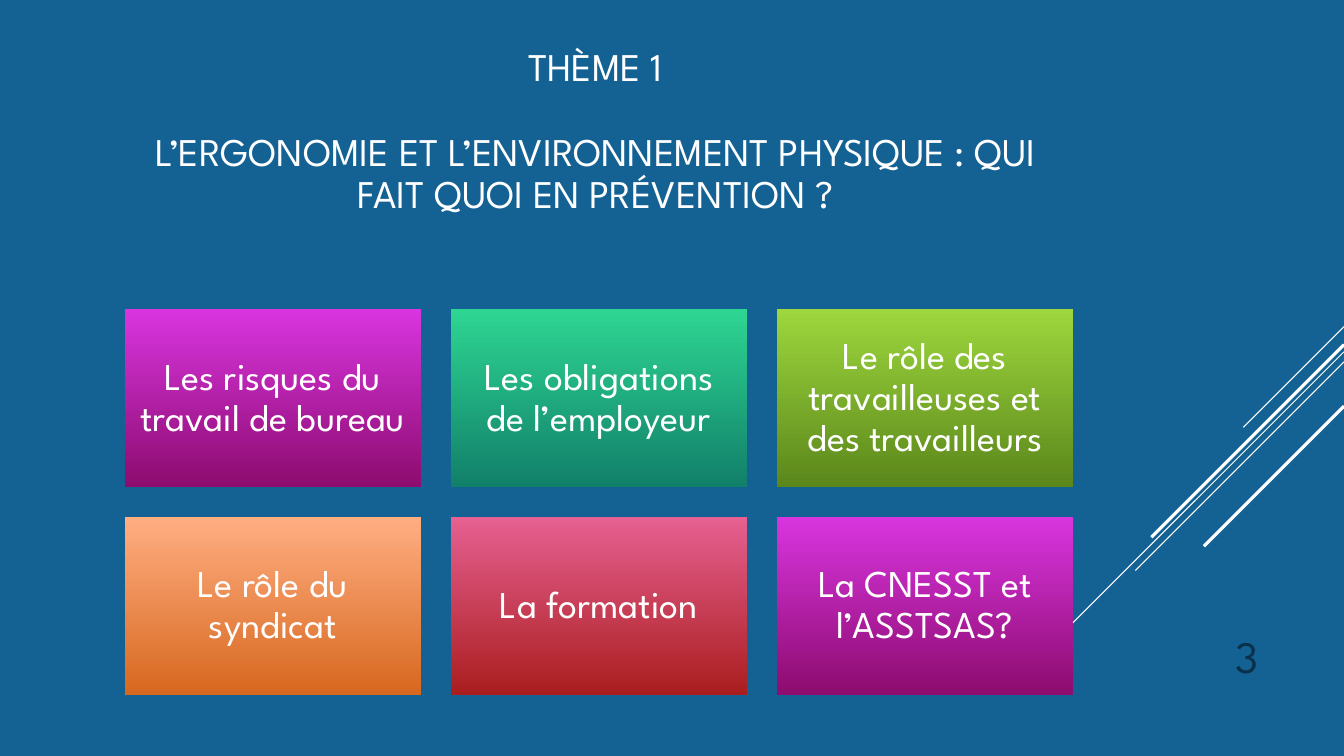
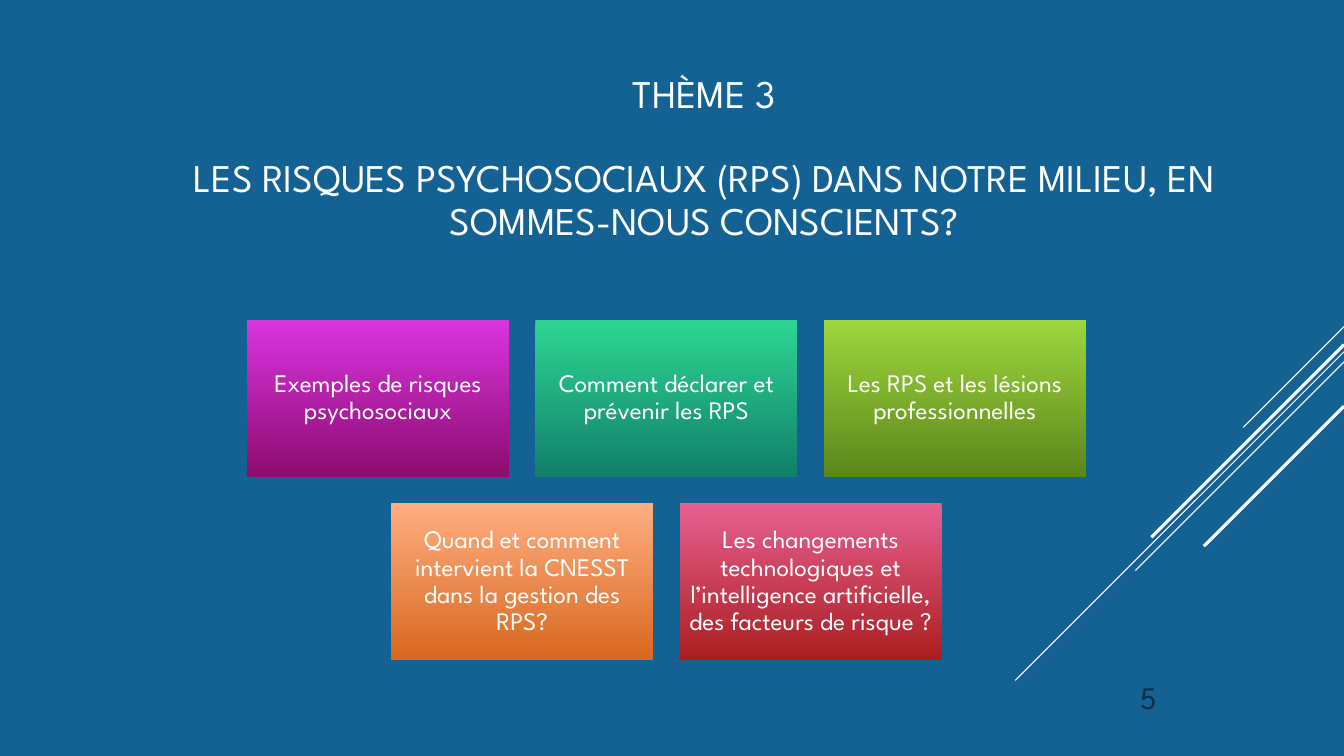
from pptx import Presentation
from pptx.dml.color import RGBColor
from pptx.enum.shapes import MSO_CONNECTOR, MSO_SHAPE
from pptx.enum.text import MSO_ANCHOR as ANCHOR, MSO_AUTO_SIZE as AUTO, PP_ALIGN as ALIGN
from pptx.oxml.ns import qn
from pptx.util import Inches, Pt
from lxml.etree import SubElement

FONT = "League Spartan"
BACKGROUND, WHITE, NUMBER_COLOR = "146194", "FFFFFF", "0A304A"
GRADIENTS = [
    ("D835DF", "8D0C6F"),
    ("2ED592", "11806A"),
    ("9DD63D", "5B871B"),
    ("FFAE82", "D7681F"),
    ("E66091", "AA1E1F"),
]
RIGHT_EDGE = 13.33
DIAGONALS = [
    (3.24, 1.0, 0.75),
    (3.49, 3.26, 0.75),
    (3.59, 2.07, 0.75),
    (3.42, 1.91, 2.25),
    (4.03, 1.39, 2.25),
]
TILES_PER_ROW = 3

THEMES = [
    dict(
        title=["THÈME 1", "L’ERGONOMIE ET L’ENVIRONNEMENT PHYSIQUE : QUI FAIT QUOI EN PRÉVENTION ?"],
        title_box=(1.24, 0.49, 9.33, 1.65),
        tiles=[
            "Les risques du travail de bureau",
            "Les obligations de l’employeur",
            "Le rôle des travailleuses et des travailleurs",
            "Le rôle du syndicat",
            "La formation",
            "La CNESST et l’ASSTSAS?",
        ],
        grid=dict(center=5.94, top=3.07, width=2.94, size=27, inset=0.11),
        number=("3", (11.33, 6.1, 1.25, 0.73), 32),
    ),
    dict(
        title=["THÈME 3", "LES RISQUES PSYCHOSOCIAUX (RPS) DANS NOTRE MILIEU, EN SOMMES-NOUS CONSCIENTS?"],
        title_box=(1.41, 0.67, 11.15, 1.82),
        tiles=[
            "Exemples de risques psychosociaux",
            "Comment déclarer et prévenir les RPS",
            "Les RPS et les lésions professionnelles",
            "Quand et comment intervient la CNESST dans la gestion des RPS?",
            "Les changements technologiques et l’intelligence artificielle, des facteurs de risque ?",
        ],
        grid=dict(center=6.61, top=3.17, width=2.6, size=18, inset=0.07),
        number=("5", (10.82, 6.76, 0.75, 0.4), 22.4),
    ),
]


def rgb(value):
    return RGBColor.from_string(value)


def add_text(p, text, size, color=WHITE, align=ALIGN.CENTER):
    p.alignment = align
    p.line_spacing = 0.9
    r = p.add_run()
    r.text = text
    r.font.name = FONT
    r.font.size = Pt(size)
    r.font.color.rgb = rgb(color)


def add_diagonals(s):
    for top, run, weight in DIAGONALS:
        ends = (RIGHT_EDGE, top, RIGHT_EDGE - run, top + run)
        line = s.shapes.add_connector(MSO_CONNECTOR.STRAIGHT, *map(Inches, ends))
        line.line.color.rgb = rgb(WHITE)
        line.line.width = Pt(weight)
        SubElement(line.element.spPr, qn("a:effectLst"))


def set_title(s, lines, box):
    sp = s.shapes.title
    sp.left, sp.top, sp.width, sp.height = map(Inches, box)
    tf = sp.text_frame
    tf.auto_size = AUTO.NONE
    tf.vertical_anchor = ANCHOR.MIDDLE
    heading, subject = tf.paragraphs[0], tf.add_paragraph()
    heading.space_after = Pt(30)
    for p, text in zip((heading, subject), lines):
        add_text(p, text, 28)


def add_tile(s, text, box, colors, size, inset):
    sp = s.shapes.add_shape(MSO_SHAPE.RECTANGLE, *map(Inches, box))
    sp.shadow.inherit = False
    sp.line.fill.background()
    sp.fill.gradient()
    sp.fill.gradient_angle = 270
    for stop, color in zip(sp.fill.gradient_stops, colors):
        stop.color.rgb = rgb(color)
    tf = sp.text_frame
    tf.word_wrap = True
    tf.vertical_anchor = ANCHOR.MIDDLE
    tf.margin_left = tf.margin_right = tf.margin_top = tf.margin_bottom = Inches(inset)
    add_text(tf.paragraphs[0], text, size)


def add_tile_grid(s, tiles, center, top, width, size, inset):
    height, gap = 0.6 * width, 0.1 * width
    for i, text in enumerate(tiles):
        row, col = divmod(i, TILES_PER_ROW)
        in_row = min(TILES_PER_ROW, len(tiles) - row * TILES_PER_ROW)
        left = center - (in_row * (width + gap) - gap) / 2
        box = (left + col * (width + gap), top + row * (height + gap), width, height)
        add_tile(s, text, box, GRADIENTS[i % len(GRADIENTS)], size, inset)


def add_number(s, text, box, size):
    tf = s.shapes.add_textbox(*map(Inches, box)).text_frame
    tf.word_wrap = True
    tf.vertical_anchor = ANCHOR.BOTTOM
    add_text(tf.paragraphs[0], text, size, NUMBER_COLOR, ALIGN.RIGHT)


def main():
    prs = Presentation()
    prs.slide_width, prs.slide_height = Inches(13.33), Inches(7.5)
    fill = prs.slide_master.background.fill
    fill.solid()
    fill.fore_color.rgb = rgb(BACKGROUND)
    for theme in THEMES:
        s = prs.slides.add_slide(prs.slide_layouts.get_by_name("Title Only"))
        add_diagonals(s)
        set_title(s, theme["title"], theme["title_box"])
        add_tile_grid(s, theme["tiles"], **theme["grid"])
        add_number(s, *theme["number"])
    prs.save("out.pptx")


if __name__ == "__main__":
    main()
